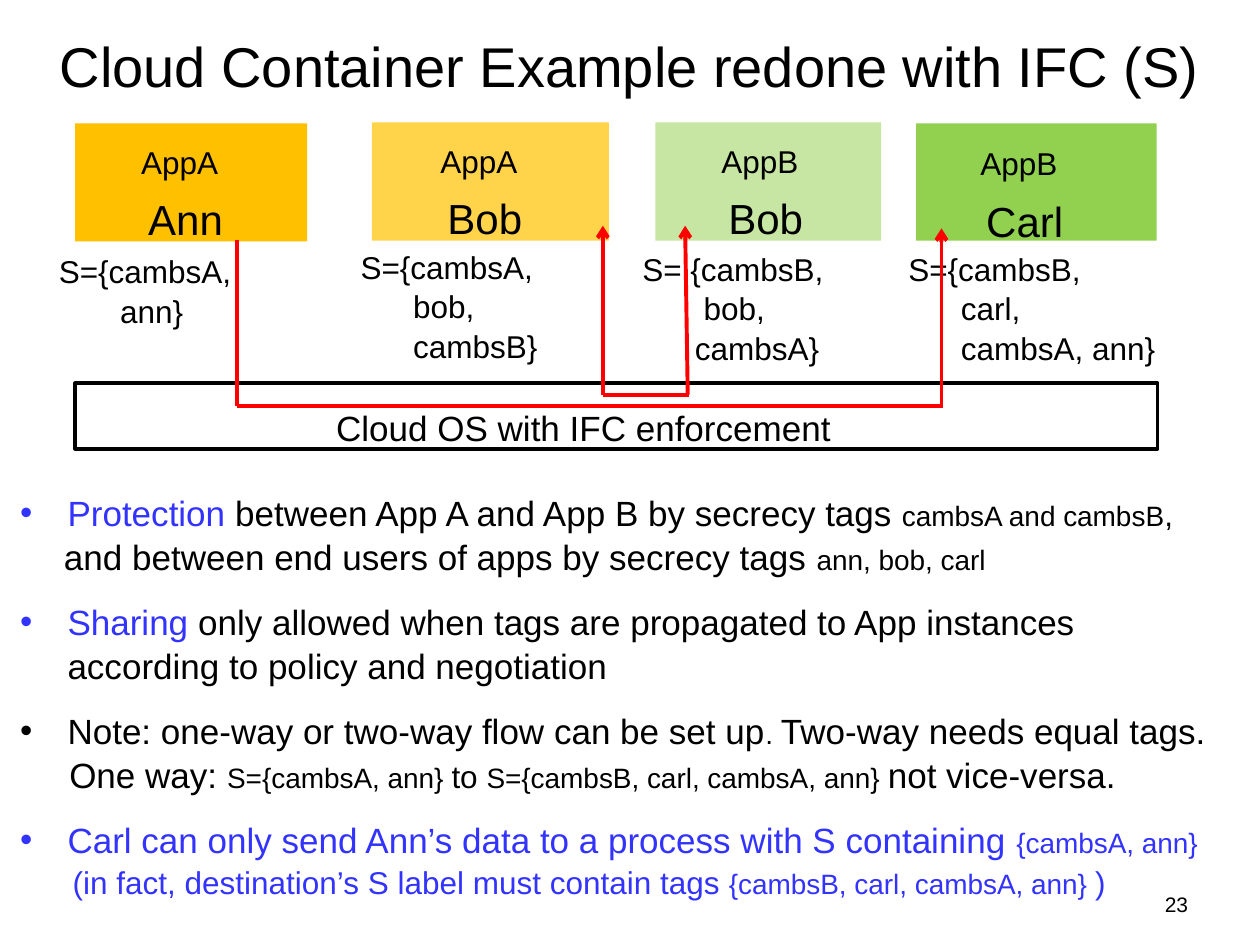
from lxml import etree
from pptx import Presentation
from pptx import util as u
from pptx.dml.color import RGBColor
from pptx.enum import shapes, text
from pptx.oxml.ns import qn

Pt = u.Pt
FONT = "Arial"
BLACK = RGBColor(0x00, 0x00, 0x00)
BLUE = RGBColor(0x33, 0x33, 0xFF)
RED = RGBColor(0xFF, 0x00, 0x00)
AMBER = RGBColor(0xFF, 0xC0, 0x00)
YELLOW = RGBColor(0xFF, 0xD4, 0x4B)
PALE_GREEN = RGBColor(0xC7, 0xE6, 0xA4)
GREEN = RGBColor(0x92, 0xD0, 0x50)

# App, user, card colour, card box, label offset, tags offset, tag lines (indent, text)
APPS = [
    ("AppA", "Ann", AMBER, (43, 70.5, 132.5, 67.5), (20.5, 0), (-16.5, 69),
     [(0, "S={cambsA,"), (35, "ann}")]),
    ("AppA", "Bob", YELLOW, (212.5, 70, 135.5, 67.5), (22, 0), (-13.5, 67),
     [(0, "S={cambsA,"), (30, "bob,"), (30, "cambsB}")]),
    ("AppB", "Bob", PALE_GREEN, (374.5, 70, 129, 67.5), (20.5, 0), (-14.5, 68),
     [(0, "S= {cambsB,"), (35, "bob,"), (30, "cambsA}")]),
    ("AppB", "Carl", GREEN, (523.5, 70.5, 137.5, 67), (19.5, 1), (-11.5, 67.5),
     [(0, "S={cambsB,"), (30, "carl,"), (30, "cambsA, ann}")]),
]

# Bulleted?, left indent, space before, runs (text, size, colour)
NOTES = [
    (True, 27, 0, [("Protection", 20, BLUE),
                   (" between App A and App B by secrecy tags ", 20, BLACK),
                   ("cambsA and cambsB", 16, BLACK), (",", 18, BLACK)]),
    (False, 25, 0, [("and between end users of apps by secrecy tags ", 20, BLACK),
                    ("ann, bob, carl", 16, BLACK)]),
    (True, 27, 12, [("Sharing ", 20, BLUE),
                    ("only allowed when tags are propagated to App instances "
                     "according to policy and negotiation", 20, BLACK)]),
    (True, 27, 12, [("Note: one-way or two-way flow can be set up", 20, BLACK),
                    (". ", 16, BLACK), ("Two-way needs equal tags.", 20, BLACK)]),
    (False, 28, 0, [("One way: ", 20, BLACK), ("S={cambsA, ann} ", 16, BLACK),
                    ("to ", 18, BLACK), ("S={cambsB, carl, cambsA, ann} ", 16, BLACK),
                    ("not vice-versa.", 20, BLACK)]),
    (True, 27, 12, [("Carl can only send Ann’s data to a process with S containing ",
                     20, BLUE), ("{cambsA, ann}", 16, BLUE)]),
    (False, 30, 0, [("(in fact, destination’s S label must contain tags ", 18, BLUE),
                    ("{cambsB, carl, cambsA, ann} ", 16, BLUE), (")", 18, BLUE)]),
]


def add_rect(s, box, fill=None, line=None):
    sp = s.shapes.add_shape(shapes.MSO_SHAPE.RECTANGLE, *map(Pt, box))
    sp.shadow.inherit = False
    if fill is None:
        sp.fill.background()
    else:
        sp.fill.solid()
        sp.fill.fore_color.rgb = fill
    if line is None:
        sp.line.fill.background()
    else:
        sp.line.color.rgb = line
        sp.line.width = Pt(2)


def add_text(s, box, paragraphs, align=text.PP_ALIGN.LEFT, spacing=1.05):
    """Add a text box; each paragraph is (bulleted, indent, space before, runs)."""
    tf = s.shapes.add_textbox(*map(Pt, box)).text_frame
    tf.word_wrap = True
    for i, (bulleted, indent, before, runs) in enumerate(paragraphs):
        p = tf.add_paragraph() if i else tf.paragraphs[0]
        p.alignment = align
        p.line_spacing = spacing
        p.space_before = Pt(before)
        pPr = p._p.get_or_add_pPr()
        pPr.set("marL", str(Pt(indent)))
        pPr.set("indent", str(-Pt(indent) if bulleted else 0))
        if bulleted:
            etree.SubElement(pPr, qn("a:buFont")).set("typeface", FONT)
            etree.SubElement(pPr, qn("a:buChar")).set("char", "•")
        for content, size, color in runs:
            r = p.add_run()
            r.text = content
            r.font.name, r.font.size = FONT, Pt(size)
            r.font.color.rgb = color
    return tf


def add_line(s, start, end, arrow=False):
    c = s.shapes.add_connector(shapes.MSO_CONNECTOR.STRAIGHT, *map(Pt, start + end))
    c.line.color.rgb = RED
    c.line.width = Pt(2.25)
    if arrow:
        etree.SubElement(c.line._get_or_add_ln(), qn("a:tailEnd")).set("type", "arrow")
    etree.SubElement(c._element.spPr, qn("a:effectLst"))


def add_title(s, box):
    tf = add_text(s, box, [(False, 0, 0, [
        ("Cloud Container Example redone with IFC (S)", 32, BLACK)])],
        text.PP_ALIGN.CENTER, 1)
    tf.vertical_anchor = text.MSO_ANCHOR.MIDDLE


def add_app(s, box, app, user, fill, label_offset, tags_offset, tags):
    x, y = box[:2]
    add_rect(s, box, fill)
    add_text(s, (x + label_offset[0], y + label_offset[1], 85, 67), [
        (False, 0, 0, [(app, 18, BLACK), (" ", 24, BLACK)]),
        (False, 0, 4.8, [(user, 24, BLACK)])], text.PP_ALIGN.CENTER)
    add_text(s, (x + tags_offset[0], y + tags_offset[1], 181, 64),
             [(False, indent, 0, [(tag, 18, BLACK)]) for indent, tag in tags])


def add_cloud_os(s, box):
    x, y, w, h = box
    add_rect(s, box, line=BLACK)
    add_text(s, (x + 142, y + 8.5, 390, 39),
             [(False, 0, 0, [("Cloud OS with IFC enforcement", 20, BLACK)])])


def add_flows(s, box):
    """Route the flows between the cards and the OS bar, inside the given box."""
    x, y, w, h = box
    # Two-way flow between the two Bobs
    bob_a, bob_b, shared = x + 209, x + 257.5, y + 96.5
    add_line(s, (bob_a, shared), (bob_b + 1, shared))
    add_line(s, (bob_a, shared), (bob_a, y), True)
    add_line(s, (bob_b, shared), (bob_b - 1.5, y), True)
    # One-way flow from Ann to Carl
    bottom, carl = y + h, x + w
    add_line(s, (x, y + 8), (x, bottom))
    add_line(s, (x, bottom), (carl + 1, bottom))
    add_line(s, (carl, bottom), (carl, y + 1.5), True)


def main():
    prs = Presentation()
    prs.slide_width, prs.slide_height = Pt(720), Pt(540)
    s = prs.slides.add_slide(prs.slide_layouts[6])

    add_title(s, (18, 9.5, 684, 55.5))
    add_cloud_os(s, (43, 219, 618.5, 37.5))
    for app, user, fill, box, label_offset, tags_offset, tags in APPS:
        add_app(s, box, app, user, fill, label_offset, tags_offset, tags)
    add_flows(s, (135.5, 129, 402.5, 103))
    add_text(s, (4.5, 276, 704, 255), NOTES)
    # Slide number
    add_text(s, (516, 506, 170, 23), [(False, 0, 0, [("23", 12, BLACK)])],
             text.PP_ALIGN.RIGHT, 1)

    prs.save("out.pptx")


if __name__ == "__main__":
    main()
